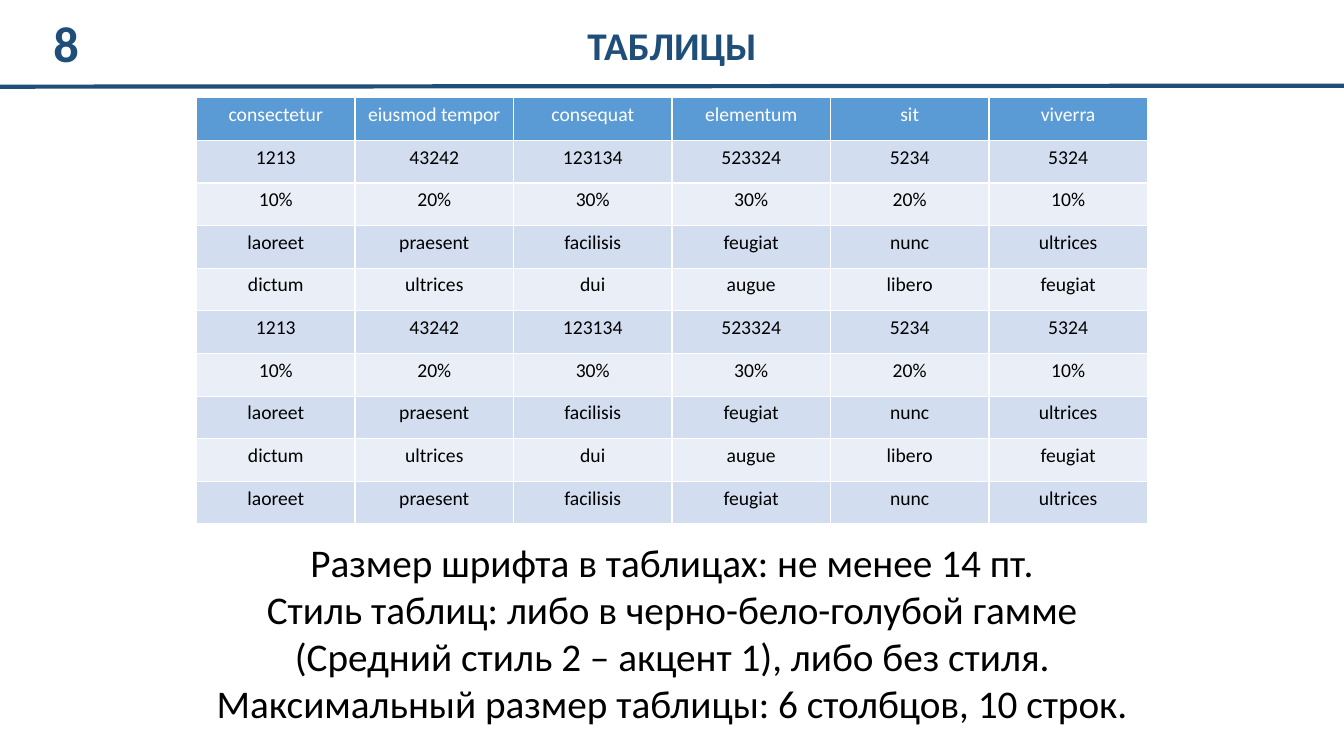
from dataclasses import dataclass
from itertools import cycle, islice

from lxml.etree import SubElement
from pptx import Presentation
from pptx.dml.color import RGBColor
from pptx.enum.shapes import MSO_CONNECTOR
from pptx.enum.text import MSO_ANCHOR, MSO_AUTO_SIZE, PP_ALIGN
from pptx.oxml.ns import qn
from pptx.util import Inches, Pt


@dataclass(frozen=True)
class Theme:
    font: str = "Calibri"
    navy: RGBColor = RGBColor(0x1F, 0x4E, 0x79)
    header: RGBColor = RGBColor(0x5B, 0x9B, 0xD5)
    bands: tuple = (RGBColor(0xD2, 0xDE, 0xEF), RGBColor(0xEA, 0xEF, 0xF7))
    white: RGBColor = RGBColor(0xFF, 0xFF, 0xFF)
    black: RGBColor = RGBColor(0, 0, 0)
    number_size: Pt = Pt(36)
    title_size: Pt = Pt(28)
    body_size: Pt = Pt(28)
    table_size: Pt = Pt(14)
    rule_width: Pt = Pt(3)


THEME = Theme()

HEADINGS = ["consectetur", "eiusmod tempor", "сonsequat", "elementum", "sit", "viverra"]
ROW_CYCLE = [
    ["1213", "43242", "123134", "523324", "5234", "5324"],
    ["10%", "20%", "30%", "30%", "20%", "10%"],
    ["laoreet", "praesent", "facilisis", "feugiat", "nunc", "ultrices"],
    ["dictum", "ultrices", "dui", "augue", "libero", "feugiat"],
]
# The four sample rows repeat, and the last row is a third "laoreet" row
DATA_ROWS = [*islice(cycle(ROW_CYCLE), 8), ROW_CYCLE[2]]
NOTES = [
    "Размер шрифта в таблицах: не менее 14 пт.",
    "Стиль таблиц: либо в черно-бело-голубой гамме (Средний стиль 2 – акцент 1), "
    "либо без стиля. Максимальный размер таблицы: 6 столбцов, 10 строк.",
]


def place(shape, left, top, width, height):
    shape.left, shape.top = Inches(left), Inches(top)
    shape.width, shape.height = Inches(width), Inches(height)


def format_text(frame, size, color, bold=False):
    for para in frame.paragraphs:
        para.alignment = PP_ALIGN.CENTER
        para.space_before = Pt(0)
        for span in para.runs:
            span.font.name = THEME.font
            span.font.size = size
            span.font.bold = bold
            span.font.color.rgb = color


def add_rule(page):
    rule = page.shapes.add_connector(
        MSO_CONNECTOR.STRAIGHT, Inches(0), Inches(0.86), Inches(13.33), Inches(0.85))
    rule.line.color.rgb = THEME.navy
    rule.line.width = THEME.rule_width
    SubElement(rule.element.spPr, qn("a:effectLst"))


def add_page_number(page, number):
    box = page.shapes.add_textbox(Inches(0.2), Inches(0.22), Inches(0.91), Inches(0.4))
    frame = box.text_frame
    frame.word_wrap = True
    frame.vertical_anchor = MSO_ANCHOR.MIDDLE
    frame.text = number
    format_text(frame, THEME.number_size, THEME.navy, bold=True)


def fill_title(title, text):
    place(title, 2.72, 0.16, 7.89, 0.57)
    title.text_frame.text = text
    title.text_frame.auto_size = MSO_AUTO_SIZE.SHAPE_TO_FIT_TEXT
    format_text(title.text_frame, THEME.title_size, THEME.navy, bold=True)


def fill_body(body, lines):
    place(body, 1.95, 5.29, 9.43, 1.99)
    frame = body.text_frame
    frame.text = "\n".join(lines)
    frame.auto_size = MSO_AUTO_SIZE.SHAPE_TO_FIT_TEXT
    # Plain centred paragraphs without list bullets
    for para in frame.paragraphs:
        properties = para._p.get_or_add_pPr()
        properties.set("marL", "0")
        properties.set("indent", "0")
        SubElement(properties, qn("a:buNone"))
    format_text(frame, THEME.body_size, THEME.black)


def add_sample_table(page, rows):
    # The default table style supplies the white grid lines
    table = page.shapes.add_table(
        len(rows), len(rows[0]),
        Inches(1.95), Inches(0.97), Inches(9.43), Inches(4.23)).table
    for row_index, values in enumerate(rows):
        is_header = row_index == 0
        fill = THEME.header if is_header else THEME.bands[(row_index - 1) % 2]
        color = THEME.white if is_header else THEME.black
        for column_index, value in enumerate(values):
            cell = table.cell(row_index, column_index)
            cell.text_frame.text = value
            cell.fill.solid()
            cell.fill.fore_color.rgb = fill
            format_text(cell.text_frame, THEME.table_size, color)


def main():
    deck = Presentation()
    deck.slide_width, deck.slide_height = Inches(13.33), Inches(7.5)
    page = deck.slides.add_slide(deck.slide_layouts.get_by_name("Title and Content"))

    # Heading band
    add_rule(page)
    add_page_number(page, "8")
    fill_title(page.shapes.title, "ТАБЛИЦЫ")

    # Sample table and the rules for tables
    add_sample_table(page, [HEADINGS, *DATA_ROWS])
    fill_body(page.placeholders[1], NOTES)

    deck.save("out.pptx")


if __name__ == "__main__":
    main()
